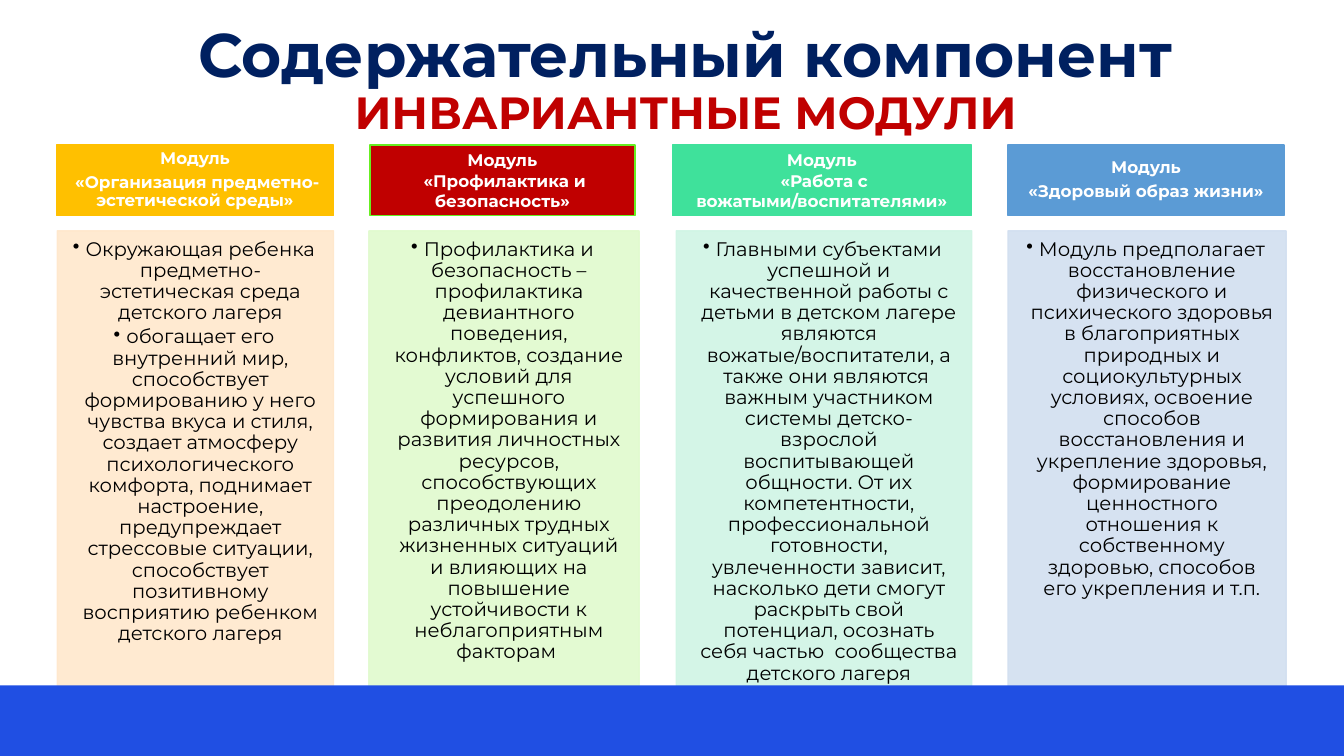
from dataclasses import dataclass

from lxml.etree import SubElement
from pptx import Presentation
from pptx.dml.color import RGBColor
from pptx.enum.shapes import MSO_SHAPE
from pptx.enum.text import MSO_ANCHOR, MSO_AUTO_SIZE, PP_ALIGN
from pptx.oxml.ns import qn
from pptx.util import Pt

FONT = "Montserrat"
WHITE = RGBColor(0xFF, 0xFF, 0xFF)
BLACK = RGBColor(0, 0, 0)
NAVY = RGBColor(0x00, 0x20, 0x60)
RED = RGBColor(0xC0, 0x00, 0x00)
BLUE = RGBColor(0x20, 0x4F, 0xE3)
GOLD = RGBColor(0xFF, 0xC0, 0x00)
LIME = RGBColor(0x67, 0xEF, 0x21)
GREEN = RGBColor(0x3F, 0xE1, 0x9B)
SKY = RGBColor(0x5B, 0x9B, 0xD5)
PEACH = RGBColor(0xFF, 0xE8, 0xCC)
PALE = RGBColor(0xE1, 0xFA, 0xCE)
MINT = RGBColor(0xD0, 0xF5, 0xE5)
MIST = RGBColor(0xD2, 0xDF, 0xF0)

WIDTH, HEIGHT = 960, 540
HEAD_TOP, HEAD_TALL = 103.7, 50.4
BODY_TOP, BODY_TALL = 164.9, 353.5
BAR_TALL = 50.4


@dataclass
class Module:
    head: tuple  # left, width
    body: tuple  # left, width
    fill: RGBColor
    edge: RGBColor
    tint: RGBColor
    name: str
    items: list
    lead: float = 1
    after: float = 0


MODULES = [
    Module((40.3, 198), (41, 197.3), GOLD, GOLD, PEACH,
           " «Организация предметно-эстетической среды»",
           ["Окружающая ребенка предметно-эстетическая среда детского лагеря",
            "обогащает его внутренний мир, способствует формированию у него "
            "чувства вкуса и стиля, создает атмосферу психологического "
            "комфорта, поднимает настроение, предупреждает стрессовые "
            "ситуации, способствует позитивному восприятию ребенком "
            "детского лагеря"], 0.9, 4.2),
    Module((264.2, 189.4), (263.5, 193), RED, LIME, PALE,
           " «Профилактика и безопасность»",
           ["Профилактика и безопасность – профилактика девиантного "
            "поведения, конфликтов, создание условий для успешного "
            "формирования и развития личностных ресурсов, способствующих "
            "преодолению различных трудных жизненных ситуаций и влияющих на "
            "повышение устойчивости к неблагоприятным факторам "]),
    Module((480.2, 213.8), (483.1, 211), GREEN, GREEN, MINT,
           " «Работа с вожатыми/воспитателями»",
           ["Главными субъектами успешной и качественной работы с детьми в "
            "детском лагере являются вожатые/воспитатели, а также они "
            "являются  важным участником системы детско-взрослой "
            "воспитывающей общности. От их компетентности, профессиональной "
            "готовности, увлеченности зависит, насколько дети смогут "
            "раскрыть свой потенциал, осознать себя частью  сообщества "
            "детского лагеря"]),
    Module((720, 197.3), (720, 198.7), SKY, SKY, MIST,
           "«Здоровый образ жизни»",
           ["Модуль предполагает восстановление физического и психического "
            "здоровья в благоприятных природных и социокультурных условиях, "
            "освоение способов восстановления и укрепление здоровья, "
            "формирование ценностного отношения к собственному здоровью, "
            "способов его укрепления и т.п."], 0.9, 4.2),
]


def add_box(slide, left, top, wide, tall, fill, edge=None):
    box = slide.shapes.add_shape(
        MSO_SHAPE.RECTANGLE, Pt(left), Pt(top), Pt(wide), Pt(tall))
    box.shadow.inherit = False
    box.fill.solid()
    box.fill.fore_color.rgb = fill
    if edge is None:
        box.line.fill.background()
    else:
        box.line.color.rgb = edge
        box.line.width = Pt(1)
    return box


def set_alpha(box, percent):
    """Make the fill and the line of a box partly transparent."""
    for color in box._element.spPr.iter(qn("a:srgbClr")):
        SubElement(color, qn("a:alpha"), val=str(percent * 1000))


def set_frame(frame, anchor, left, top, right, bottom):
    frame.word_wrap = True
    frame.auto_size = MSO_AUTO_SIZE.NONE
    frame.vertical_anchor = anchor
    frame.margin_left, frame.margin_top = Pt(left), Pt(top)
    frame.margin_right, frame.margin_bottom = Pt(right), Pt(bottom)


def add_run(para, text, size, color, bold=False):
    run = para.add_run()
    run.text = text
    font = run.font
    font.name, font.size, font.bold = FONT, Pt(size), bold
    font.color.rgb = color


def add_paras(frame, texts, lead, after, size, color, bold=False):
    for i, text in enumerate(texts):
        para = frame.add_paragraph() if i else frame.paragraphs[0]
        para.alignment = PP_ALIGN.CENTER
        para.line_spacing = lead
        para.space_after = Pt(after)
        add_run(para, text, size, color, bold)


def add_bullet(para):
    props = para._p.get_or_add_pPr()
    props.set("marL", str(Pt(9)))
    props.set("indent", str(Pt(-9)))
    SubElement(props, qn("a:buChar"), char="•")


def add_module(slide, mod):
    left, wide = mod.head
    head = add_box(slide, left, HEAD_TOP, wide, HEAD_TALL, mod.fill, mod.edge)
    set_frame(head.text_frame, MSO_ANCHOR.MIDDLE, 6.7, 3.8, 6.7, 3.8)
    add_paras(head.text_frame, ["Модуль", mod.name], mod.lead, mod.after,
              12, WHITE, True)

    left, wide = mod.body
    body = add_box(slide, left, BODY_TOP, wide, BODY_TALL, mod.tint, mod.tint)
    set_alpha(body, 90)
    set_frame(body.text_frame, MSO_ANCHOR.TOP, 6, 6, 8, 9)
    add_paras(body.text_frame, mod.items, 0.9, 2.1, 14, BLACK)
    for para in body.text_frame.paragraphs:
        add_bullet(para)


def set_title(slide):
    title = slide.shapes.title
    title.left, title.top = Pt(19.4), Pt(13.7)
    title.width, title.height = Pt(940.6), Pt(90)
    set_frame(title.text_frame, MSO_ANCHOR.MIDDLE, 7.2, 3.6, 7.2, 3.6)
    para = title.text_frame.paragraphs[0]
    para.alignment = PP_ALIGN.CENTER
    para.line_spacing = 0.9
    para.space_before = Pt(0)
    add_run(para, "Содержательный компонент", 43.9, NAVY, True)
    para.add_line_break()
    add_run(para, "ИНВАРИАНТНЫЕ МОДУЛИ", 32.2, RED, True)


def main():
    deck = Presentation()
    deck.slide_width, deck.slide_height = Pt(WIDTH), Pt(HEIGHT)
    slide = deck.slides.add_slide(deck.slide_layouts[5])
    set_title(slide)
    for mod in MODULES:
        add_module(slide, mod)
    add_box(slide, 0, HEIGHT - BAR_TALL, WIDTH, BAR_TALL, BLUE)
    deck.save("out.pptx")


if __name__ == "__main__":
    main()
